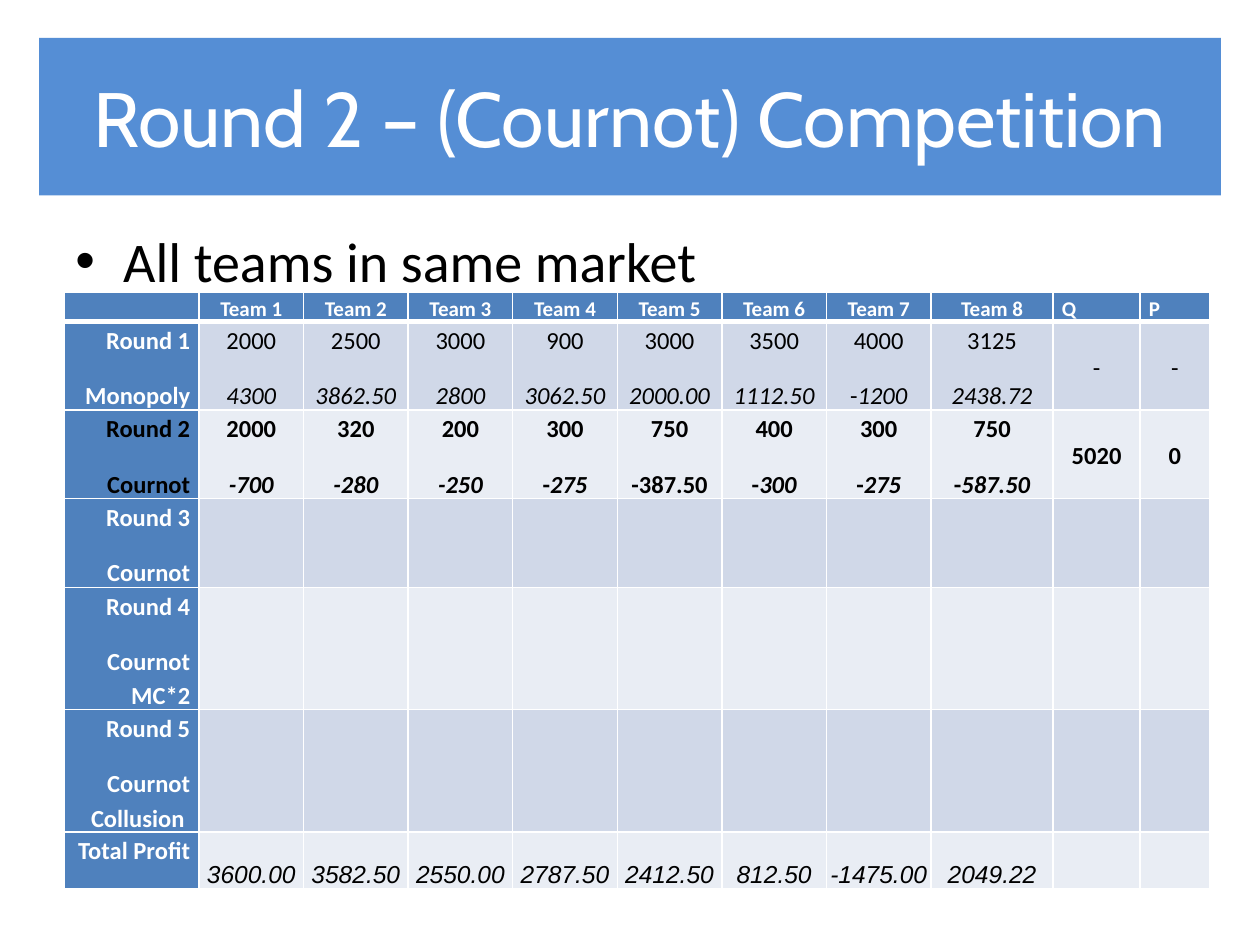
import lxml.etree
import pptx
import pptx.dml.color
import pptx.enum.shapes
import pptx.enum.text
import pptx.oxml.ns
import pptx.util

Inches, Pt = pptx.util.Inches, pptx.util.Pt
ALIGN = pptx.enum.text.PP_ALIGN
ANCHOR = pptx.enum.text.MSO_ANCHOR
qn = pptx.oxml.ns.qn

COLORS = {"banner": "558ED5", "header": "4F81BD", "odd": "D0D8E8",
          "even": "E9EDF4", "white": "FFFFFF", "black": "000000"}

TITLE = "Round 2 – (Cournot) Competition"
BULLET = "All teams in same market"
HEADINGS = [""] + [f"Team {n}" for n in range(1, 9)] + ["Q", "P"]
ROW_LABELS = [
    ("Round 1", "Monopoly"),
    ("Round 2", "Cournot"),
    ("Round 3", "Cournot"),
    ("Round 4", "Cournot MC*2"),
    ("Round 5", "Cournot Collusion "),
    ("Total Profit",),
]
# Per team: quantity, upright part of the profit, italic part of the profit
PLAYED = {
    1: [("2000", "", "4300"), ("2500", "", "3862.50"), ("3000", "", "2800"),
        ("900", "", "3062.50"), ("3000", "", "2000.00"), ("3500", "", "1112.50"),
        ("4000", "-", "1200"), ("3125", "", "2438.72")],
    2: [("2000", "", "-700"), ("320", "", "-280"), ("200", "", "-250"),
        ("300", "-", "275"), ("750", "-387.50", ""), ("400", "-", "300"),
        ("300", "-", "275"), ("750", "-", "587.50")],
}
MARKET = {1: ("-", "-"), 2: ("5020", "0")}
TOTALS = ["3600.00", "3582.50", "2550.00", "2787.50",
          "2412.50", "812.50", "-1475.00", "2049.22"]
CURRENT_ROUND = 2
TOTAL_ROW = len(ROW_LABELS)
COLUMN_WIDTHS = [1.07] + [0.83] * 7 + [0.97, 0.69, 0.55]
ROW_HEIGHTS = [0.22, 0.67, 0.67, 0.67, 0.9, 0.9, 0.45]


def rgb(name):
    return pptx.dml.color.RGBColor.from_string(COLORS[name])


def add_span(para, text, size, color, bold=False, italic=False, font="Calibri"):
    span = para.add_run()
    span.text = text
    span.font.name, span.font.size = font, Pt(size)
    span.font.bold, span.font.italic = bold, italic
    span.font.color.rgb = rgb(color)


def set_borders(cell, top, bottom):
    """Draw white borders; top and bottom are widths in points."""
    properties = cell._tc.get_or_add_tcPr()
    sides = [("L", 1), ("R", 1), ("T", top), ("B", bottom)]
    for index, (side, width) in enumerate(sides):
        line = lxml.etree.Element(qn(f"a:ln{side}"), w=str(Pt(width)))
        fill = lxml.etree.SubElement(line, qn("a:solidFill"))
        lxml.etree.SubElement(fill, qn("a:srgbClr"), val=COLORS["white"])
        properties.insert(index, line)


def set_margins(cell, left, top, right, bottom):
    cell.margin_left, cell.margin_top = Inches(left), Inches(top)
    cell.margin_right, cell.margin_bottom = Inches(right), Inches(bottom)


def write_cell(cell, lines, align, size, color, bold):
    """Each line is a list of (text, italic) pieces."""
    frame = cell.text_frame
    for index, pieces in enumerate(lines):
        para = frame.add_paragraph() if index else frame.paragraphs[0]
        para.alignment = align
        para.line_spacing = 1.15
        para.space_before = para.space_after = Pt(6)
        for text, italic in pieces:
            if text:
                add_span(para, text, size, color, bold, italic)


def fill_cell(cell, row, column):
    if row == 0:
        if HEADINGS[column]:
            align = ALIGN.CENTER if column <= len(TOTALS) else ALIGN.LEFT
            write_cell(cell, [[(HEADINGS[column], False)]], align, 12, "white", True)
    elif column == 0:
        lines = [[(text, False)] for text in ROW_LABELS[row - 1]]
        color = "black" if row == CURRENT_ROUND else "white"
        write_cell(cell, lines, ALIGN.RIGHT, 14, color, True)
    elif row in PLAYED:
        if column <= len(TOTALS):
            quantity, upright, slanted = PLAYED[row][column - 1]
            lines = [[(quantity, False)], [(upright, False), (slanted, True)]]
        else:
            lines = [[(MARKET[row][column - len(TOTALS) - 1], False)]]
            cell.vertical_anchor = ANCHOR.MIDDLE
        write_cell(cell, lines, ALIGN.CENTER, 14, "black", row == CURRENT_ROUND)
    elif row == TOTAL_ROW and column <= len(TOTALS):
        set_margins(cell, 0.01, 0.01, 0.01, 0)
        cell.vertical_anchor = ANCHOR.BOTTOM
        para = cell.text_frame.paragraphs[0]
        para.alignment = ALIGN.CENTER
        add_span(para, TOTALS[column - 1], 14, "black", italic=True, font="Arial")


def add_banner(page):
    banner = page.shapes.add_shape(pptx.enum.shapes.MSO_SHAPE.RECTANGLE,
                                   Inches(0.31), Inches(0.3), Inches(9.38), Inches(1.25))
    banner.shadow.inherit = False
    banner.fill.solid()
    banner.fill.fore_color.rgb = rgb("banner")
    banner.line.fill.background()
    banner.text_frame.word_wrap = True
    banner.text_frame.vertical_anchor = ANCHOR.MIDDLE
    para = banner.text_frame.paragraphs[0]
    para.alignment = ALIGN.CENTER
    add_span(para, TITLE, 44, "white", font="Cabin")


def add_body(page):
    box = page.shapes.add_textbox(Inches(0.5), Inches(1.75), Inches(9), Inches(4.95))
    box.text_frame.word_wrap = True
    para = box.text_frame.paragraphs[0]
    para.space_before = Pt(6.4)
    properties = para._p.get_or_add_pPr()
    properties.set("marL", str(Inches(0.38)))
    properties.set("indent", str(-Inches(0.38)))
    lxml.etree.SubElement(properties, qn("a:buFont"), typeface="Arial")
    lxml.etree.SubElement(properties, qn("a:buChar"), char="•")
    add_span(para, BULLET, 32, "black")


def add_results(page):
    frame = page.shapes.add_table(len(ROW_HEIGHTS), len(COLUMN_WIDTHS), Inches(0.51),
                                  Inches(2.32), Inches(sum(COLUMN_WIDTHS)),
                                  Inches(sum(ROW_HEIGHTS)))
    table = frame.table
    for column, width in enumerate(COLUMN_WIDTHS):
        table.columns[column].width = Inches(width)
    for row, height in enumerate(ROW_HEIGHTS):
        table.rows[row].height = Inches(height)
        for column in range(len(COLUMN_WIDTHS)):
            cell = table.cell(row, column)
            set_margins(cell, 0.07, 0, 0.07, 0)
            band = "header" if row == 0 or column == 0 else "odd" if row % 2 else "even"
            cell.fill.solid()
            cell.fill.fore_color.rgb = rgb(band)
            set_borders(cell, top=3 if row == 1 else 1, bottom=3 if row == 0 else 1)
            fill_cell(cell, row, column)
            if not cell.text_frame.text:
                lxml.etree.SubElement(cell.text_frame.paragraphs[0]._p,
                                      qn("a:endParaRPr"), sz="1200")


def main():
    deck = pptx.Presentation()
    deck.slide_width, deck.slide_height = Inches(10), Inches(7.5)
    page = deck.slides.add_slide(deck.slide_layouts[6])
    add_banner(page)
    add_body(page)
    add_results(page)
    deck.save("out.pptx")


if __name__ == "__main__":
    main()
